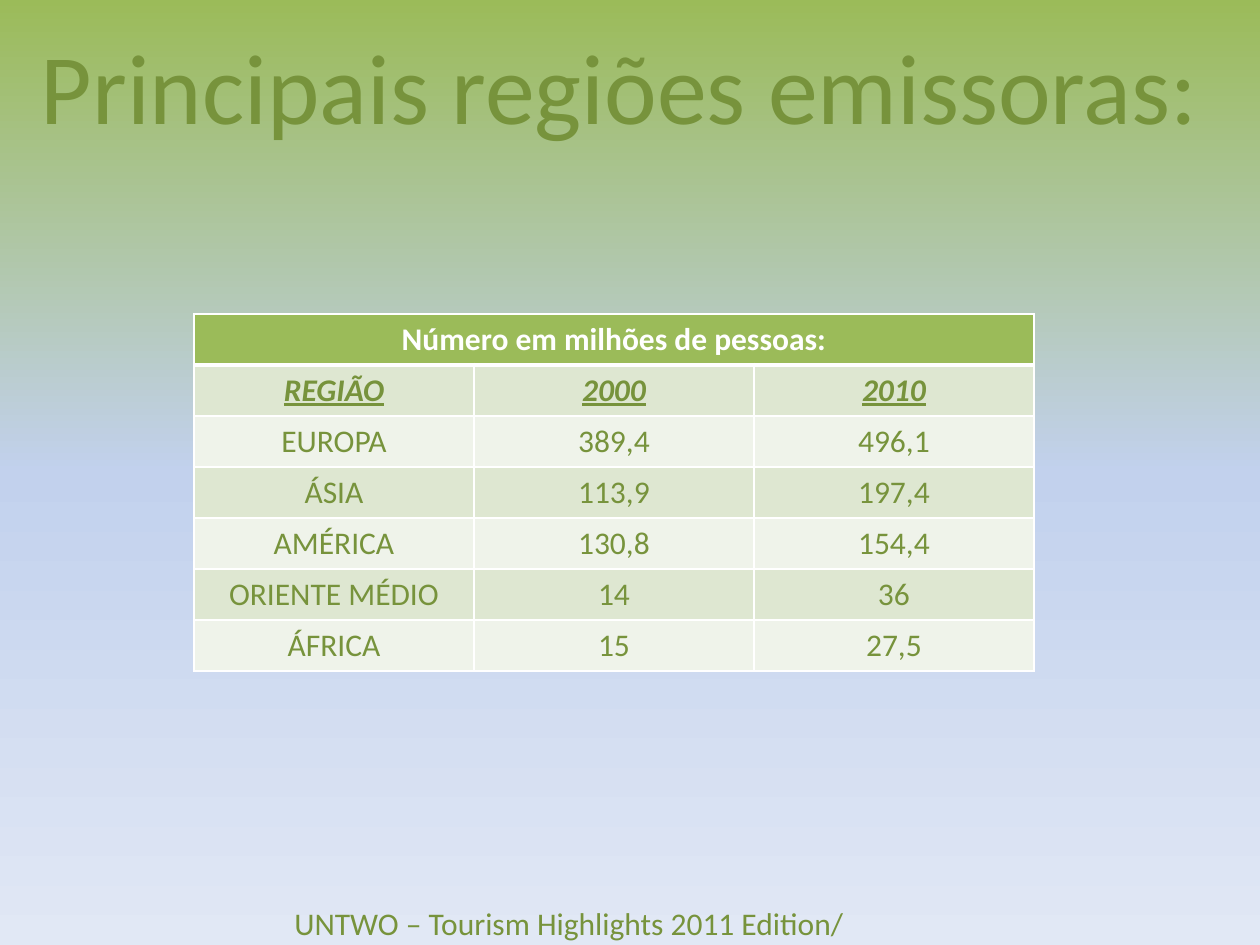
from copy import deepcopy

from lxml.etree import SubElement
from pptx import Presentation
from pptx.dml.color import RGBColor
from pptx.enum.text import MSO_ANCHOR, PP_ALIGN
from pptx.oxml.ns import qn
from pptx.util import Emu, Pt

PX = 914400 // 126
GREEN, DARK_GREEN, WHITE = "9BBB59", "77933C", "FFFFFF"
BANDS = ("DEE7D1", "EFF3EA")
BACKDROP = [(0, GREEN), (0.5, "C2D1ED"), (1, "E1E8F5")]

TITLE = "Principais regiões emissoras:"
SOURCE = "UNTWO – Tourism Highlights 2011 Edition/"
REGIONS = [
    ("Número em milhões de pessoas:", "", ""),
    ("REGIÃO", "2000", "2010"),
    ("EUROPA", "389,4", "496,1"),
    ("ÁSIA", "113,9", "197,4"),
    ("AMÉRICA", "130,8", "154,4"),
    ("ORIENTE MÉDIO", "14", "36"),
    ("ÁFRICA", "15", "27,5"),
]
TABLE_LEFT, TABLE_TOP, COLUMN_WIDTH, ROW_HEIGHT = 194, 314, 280, 51

BODY = {"name": "Calibri", "size": Pt(18), "bold": False}
HEADLINE = BODY | {"size": Pt(57)}
ROW_FORMATS = {
    0: BODY | {"bold": True},
    1: BODY | {"bold": True, "italic": True, "underline": True},
}


def px(*lengths):
    return [Emu(length * PX) for length in lengths]


def rgb(code):
    return RGBColor.from_string(code)


def write(frame, text, font_format, color=DARK_GREEN, align=PP_ALIGN.CENTER):
    paragraph = frame.paragraphs[0]
    paragraph.alignment = align
    run = paragraph.add_run()
    run.text = text
    for attribute, value in font_format.items():
        setattr(run.font, attribute, value)
    run.font.color.rgb = rgb(color)


def add_text(slide, place, text, font_format, align, anchor):
    frame = slide.shapes.add_textbox(*px(*place)).text_frame
    frame.word_wrap = True
    frame.vertical_anchor = anchor
    write(frame, text, font_format, align=align)


def paint_backdrop(slide):
    fill = slide.background.fill
    fill.gradient()
    fill.gradient_angle = 270
    first_stop = next(slide.element.iter(qn("a:gs")))
    first_stop.addnext(deepcopy(first_stop))
    for stop, (position, color) in zip(fill.gradient_stops, BACKDROP):
        stop.position = position
        stop.color.rgb = rgb(color)


def add_borders(cell, widths):
    properties = cell._tc.get_or_add_tcPr()
    for side, width in widths.items():
        line = SubElement(properties, qn(f"a:ln{side}"), w=str(Pt(width)))
        fill = SubElement(line, qn("a:solidFill"))
        SubElement(fill, qn("a:srgbClr"), val=WHITE)


def add_regions(slide):
    rows, columns = len(REGIONS), len(REGIONS[0])
    place = px(TABLE_LEFT, TABLE_TOP, columns * COLUMN_WIDTH, rows * ROW_HEIGHT)
    table = slide.shapes.add_table(rows, columns, *place).table
    for row in table.rows:
        row.height = px(ROW_HEIGHT)[0]
    for r, values in enumerate(REGIONS):
        for c, value in enumerate(values):
            cell = table.cell(r, c)
            add_borders(cell, {"L": 1, "R": 1, "T": 3 if r == 1 else 1, "B": 3 if r == 0 else 1})
            cell.fill.solid()
            cell.fill.fore_color.rgb = rgb(BANDS[(r - 1) % 2] if r else GREEN)
            if value:
                write(cell.text_frame, value, ROW_FORMATS.get(r, BODY), DARK_GREEN if r else WHITE)
    table.cell(0, 0).merge(table.cell(0, columns - 1))


def main():
    """Build the slide on the main tourist source regions."""
    deck = Presentation()
    deck.slide_width, deck.slide_height = px(1260, 945)
    slide = deck.slides.add_slide(deck.slide_layouts[6])
    paint_backdrop(slide)
    add_text(slide, (-6, 6, 1251, 158), TITLE, HEADLINE, PP_ALIGN.CENTER, MSO_ANCHOR.MIDDLE)
    add_regions(slide)
    add_text(slide, (282, 898, 784, 50), SOURCE, BODY, PP_ALIGN.LEFT, MSO_ANCHOR.TOP)
    deck.save("out.pptx")


if __name__ == "__main__":
    main()
